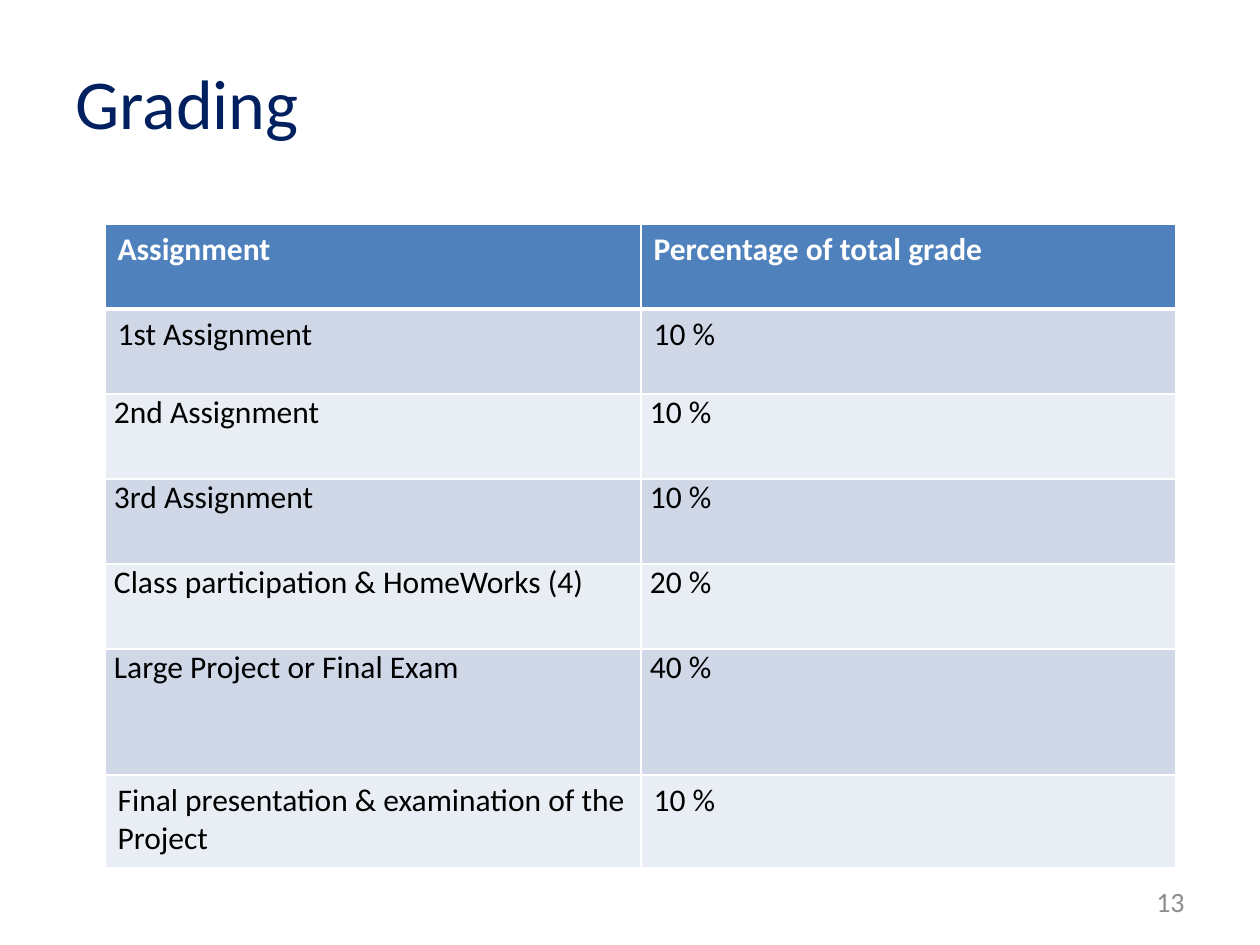
from typing import NamedTuple

from lxml.etree import SubElement
from pptx import Presentation
from pptx.dml.color import RGBColor
from pptx.enum.text import MSO_ANCHOR, PP_ALIGN
from pptx.oxml.ns import qn
from pptx.util import Emu, Pt

EMU_PER_PX = 914400 / 126
FONT = "Calibri"
COLORS = {
    "title": "002060",
    "number": "8C8C8C",
    "header": "4F81BD",
    "odd": "D0D8E8",
    "even": "E9EDF4",
    "white": "FFFFFF",
    "black": "000000",
}


class GradeItem(NamedTuple):
    assignment: str
    share: str
    height: int = 85
    tight: bool = True


HEADER = GradeItem("Assignment", "Percentage of total grade", tight=False)
ITEMS = [
    GradeItem("1st Assignment", "10 %", tight=False),
    GradeItem("2nd Assignment", "10 %"),
    GradeItem("3rd Assignment", "10 %"),
    GradeItem("Class participation & HomeWorks (4)", "20 %"),
    GradeItem("Large Project or Final Exam", "40 %", height=126),
    GradeItem("Final presentation & examination of the Project", "10 %",
              height=93, tight=False),
]
COLUMN_WIDTHS = (536, 535)


def px(length: int) -> Emu:
    return Emu(round(length * EMU_PER_PX))


def add_run(paragraph, text: str, size: int, color: str, bold: bool = False) -> None:
    run = paragraph.add_run()
    run.text = text
    run.font.name = FONT
    run.font.size = Pt(size)
    run.font.bold = bold
    run.font.color.rgb = RGBColor.from_string(COLORS[color])


def add_borders(cell, bottom_width: int) -> None:
    properties = cell._tc.get_or_add_tcPr()
    for side, width in (("L", 1), ("R", 1), ("T", 1), ("B", bottom_width)):
        line = SubElement(properties, qn(f"a:ln{side}"), w=str(Pt(width)))
        fill = SubElement(line, qn("a:solidFill"))
        SubElement(fill, qn("a:srgbClr"), val=COLORS["white"])


def fill_row(cells, item: GradeItem, fill: str, is_header: bool) -> None:
    for cell, text in zip(cells, (item.assignment, item.share)):
        add_borders(cell, 3 if is_header else 1)
        cell.fill.solid()
        cell.fill.fore_color.rgb = RGBColor.from_string(COLORS[fill])
        if item.tight:
            cell.margin_left = cell.margin_right = px(9)
            cell.margin_top = cell.margin_bottom = 0
        add_run(cell.text_frame.paragraphs[0], text, 18,
                "white" if is_header else "black", bold=is_header)


def add_grading_table(slide) -> None:
    rows = [HEADER, *ITEMS]
    table = slide.shapes.add_table(
        len(rows), len(COLUMN_WIDTHS), px(105), px(224),
        px(sum(COLUMN_WIDTHS)), px(sum(item.height for item in rows))).table
    for column, width in zip(table.columns, COLUMN_WIDTHS):
        column.width = px(width)
    for index, (row, item) in enumerate(zip(table.rows, rows)):
        row.height = px(item.height)
        fill = "header" if index == 0 else "odd" if index % 2 else "even"
        fill_row(row.cells, item, fill, is_header=index == 0)


def add_title(slide) -> None:
    title = slide.shapes.title
    title.left, title.top, title.width, title.height = map(px, (63, 38, 1133, 127))
    title.text_frame.vertical_anchor = MSO_ANCHOR.MIDDLE
    paragraph = title.text_frame.paragraphs[0]
    paragraph.alignment = PP_ALIGN.LEFT
    add_run(paragraph, "Grading", 40, "title")


def add_slide_number(slide) -> None:
    frame = slide.shapes.add_textbox(px(903), px(876), px(294), px(50)).text_frame
    frame.word_wrap = True
    frame.vertical_anchor = MSO_ANCHOR.MIDDLE
    paragraph = frame.paragraphs[0]
    paragraph.alignment = PP_ALIGN.RIGHT
    add_run(paragraph, "13", 16, "number")


def main() -> None:
    deck = Presentation()
    deck.slide_width, deck.slide_height = px(1260), px(945)
    slide = deck.slides.add_slide(deck.slide_layouts.get_by_name("Title Only"))
    add_title(slide)
    add_slide_number(slide)
    add_grading_table(slide)
    deck.save("out.pptx")


if __name__ == "__main__":
    main()
